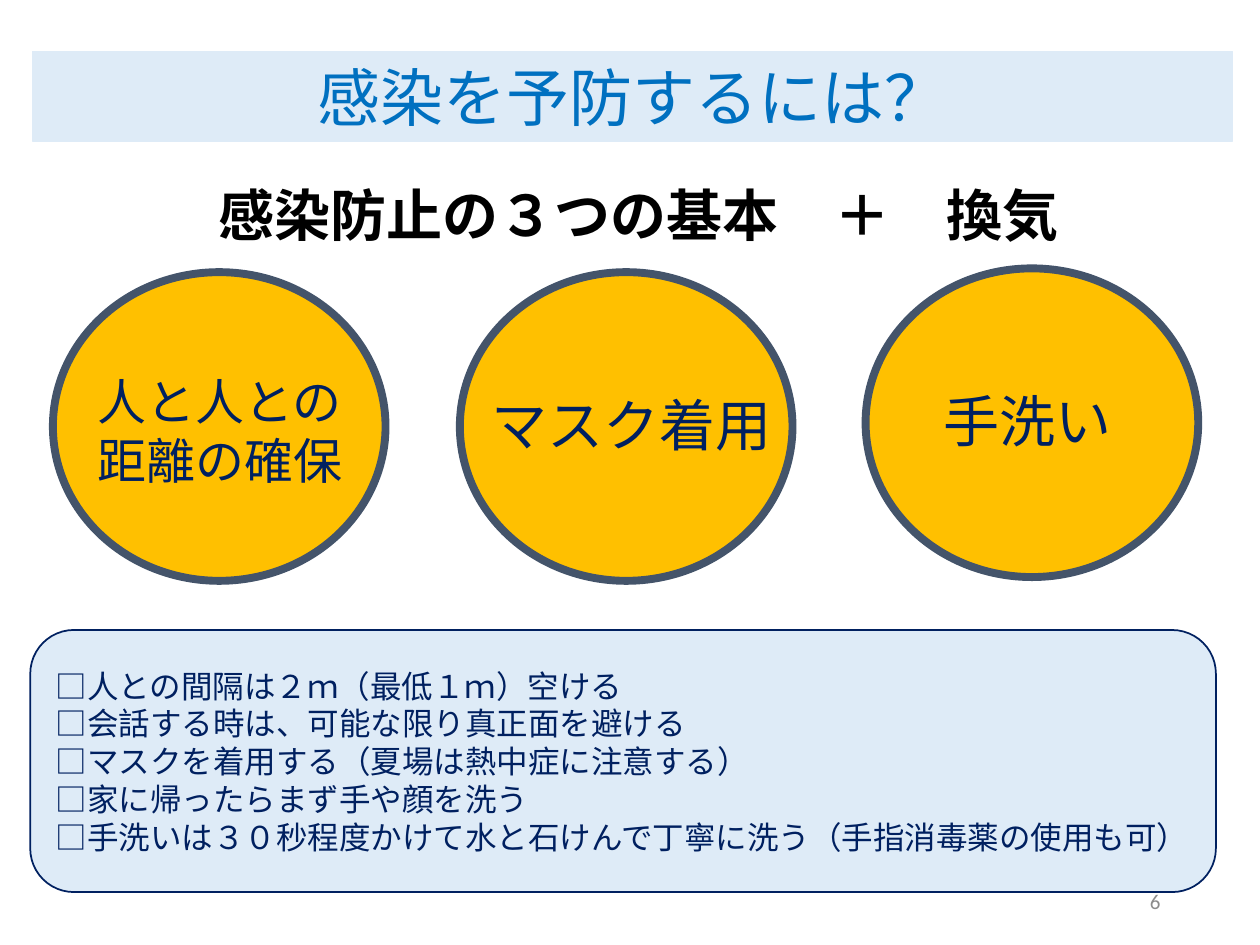
import pptx
import pptx.util
import pptx.dml.color
import pptx.enum.shapes
import pptx.enum.text
import pptx.oxml
import pptx.oxml.ns

Inches, Pt = pptx.util.Inches, pptx.util.Pt
Shape = pptx.enum.shapes.MSO_SHAPE
Align = pptx.enum.text.PP_ALIGN
Anchor = pptx.enum.text.MSO_ANCHOR
qn = pptx.oxml.ns.qn

GOTHIC = "Noto Sans CJK JP"
NAVY, PALE, SLATE = "002060", "DEEBF7", "44546A"

# circle left, circle top, label left, label top, label size, label lines
BASICS = [
    (0.42, 2.16, 0.03, 2.49, 28, ["人と人との", "距離の確保"]),
    (3.65, 2.16, 3.3, 2.44, 32, ["マスク着用"]),
    (6.87, 2.13, 6.44, 2.41, 32, ["手洗い"]),
]
CHECKS = [
    "□人との間隔は２ｍ（最低１ｍ）空ける",
    "□会話する時は、可能な限り真正面を避ける",
    "□マスクを着用する（夏場は熱中症に注意する）",
    "□家に帰ったらまず手や顔を洗う",
    "□手洗いは３０秒程度かけて水と石けんで丁寧に洗う（手指消毒薬の使用も可）",
]


def rgb(code):
    return pptx.dml.color.RGBColor.from_string(code)


def paint(shape, fill, line, width):
    shape.fill.solid()
    shape.fill.fore_color.rgb = rgb(fill)
    shape.line.color.rgb = rgb(line)
    shape.line.width = Pt(width)


def place(shape, left, top, width, height):
    shape.left, shape.top = Inches(left), Inches(top)
    shape.width, shape.height = Inches(width), Inches(height)


def write(shape, lines, size, color=NAVY, font=GOTHIC, bold=False,
          align=Align.CENTER):
    frame = shape.text_frame
    frame.word_wrap = True
    frame.auto_size = pptx.enum.text.MSO_AUTO_SIZE.NONE
    frame.vertical_anchor = Anchor.MIDDLE
    frame.text = "\n".join(lines)
    for para in frame.paragraphs:
        para.alignment = align
        para.space_before = Pt(0)
        run = para.runs[0]
        run.font.name = font
        run.font.size = Pt(size)
        run.font.bold = bold
        run.font.color.rgb = rgb(color)
        asian = pptx.oxml.parse_xml(
            f'<a:ea {pptx.oxml.ns.nsdecls("a")} typeface="{GOTHIC}"/>')
        run.font._element.find(qn("a:latin")).addnext(asian)


def label(slide, box, lines, size, **style):
    text = slide.shapes.add_textbox(*map(Inches, box))
    write(text, lines, size, **style)


def circle(slide, left, top):
    disc = slide.shapes.add_shape(
        Shape.OVAL, *map(Inches, (left, top, 2.64, 2.45)))
    disc.shadow.inherit = False
    paint(disc, "FFC000", SLATE, 4.5)


def banner(title):
    place(title, 0.26, 0.41, 9.52, 0.71)
    paint(title, PALE, PALE, 0.75)
    write(title, ["感染を予防するには？"], 36, color="0070C0")


def checklist(body):
    """Turn the body placeholder into a rounded panel without bullets."""
    place(body, 0.24, 5, 9.41, 2.08)
    outline = pptx.oxml.parse_xml(
        f'<a:prstGeom {pptx.oxml.ns.nsdecls("a")} prst="roundRect">'
        '<a:avLst/></a:prstGeom>')
    body._element.spPr.find(qn("a:xfrm")).addnext(outline)
    paint(body, PALE, NAVY, 1)
    write(body, CHECKS, 18, font="Calibri", align=Align.LEFT)
    for para in body.text_frame.paragraphs:
        props = para._p.get_or_add_pPr()
        props.set("marL", "0")
        props.set("indent", "0")
        props.append(pptx.oxml.parse_xml(
            f'<a:buNone {pptx.oxml.ns.nsdecls("a")}/>'))


def main():
    deck = pptx.Presentation()
    deck.slide_width, deck.slide_height = Inches(10), Inches(7.5)
    slide = deck.slides.add_slide(deck.slide_layouts[1])
    banner(slide.shapes.title)
    checklist(slide.placeholders[1])
    label(slide, (1.36, 1.08, 7.42, 1.24), ["感染防止の３つの基本　＋　換気"],
          32, color="000000", bold=True)
    for left, top, text_left, text_top, size, lines in BASICS:
        circle(slide, left, top)
        label(slide, (text_left, text_top, 3.43, 1.85), lines, size)
    label(slide, (7.06, 6.95, 2.25, 0.4), ["6"], 12, color="8C8C8C",
          font="Calibri", align=Align.RIGHT)
    deck.save("out.pptx")


if __name__ == "__main__":
    main()
